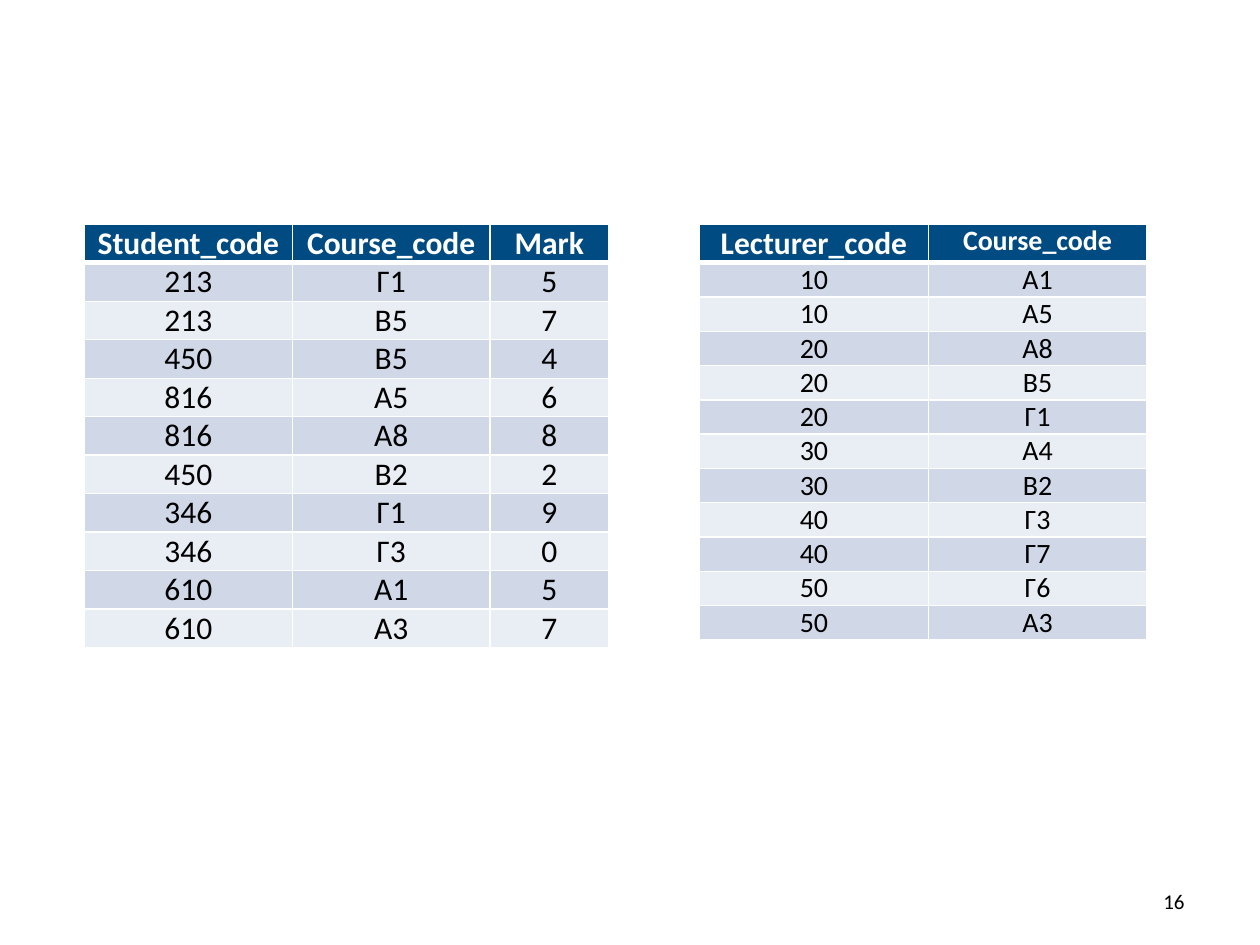
"""Build a slide with a table of student marks beside a table of lecturers' courses."""
from lxml.etree import SubElement
from pptx import Presentation
from pptx.dml.color import RGBColor
from pptx.enum.text import MSO_ANCHOR, PP_ALIGN
from pptx.oxml.ns import qn
from pptx.util import Inches, Pt


def write(tf, text, size=18, color="000000", bold=False, align=PP_ALIGN.CENTER):
    p = tf.paragraphs[0]
    p.alignment = align
    r = p.add_run()
    r.text = text
    r.font.name = "Calibri"
    r.font.size = Pt(size)
    r.font.bold = bold
    r.font.color.rgb = RGBColor.from_string(color)


def paint(cell, fill, bottom=1):
    cell.fill.solid()
    cell.fill.fore_color.rgb = RGBColor.from_string(fill)
    tcPr = cell._tc.get_or_add_tcPr()
    for i, (side, width) in enumerate(dict(lnL=1, lnR=1, lnT=1, lnB=bottom).items()):
        ln = SubElement(tcPr, qn(f"a:{side}"), w=str(Pt(width)))
        SubElement(SubElement(ln, qn("a:solidFill")), qn("a:srgbClr"), val="FFFFFF")
        tcPr.insert(i, ln)


prs = Presentation()
prs.slide_width, prs.slide_height = Inches(10), Inches(7.5)
s = prs.slides.add_slide(prs.slide_layouts[6])

marks = [
    ("Student_code", "Course_code", "Mark"),
    ("213", "Γ1", "5"), ("213", "Β5", "7"), ("450", "Β5", "4"),
    ("816", "Α5", "6"), ("816", "Α8", "8"), ("450", "Β2", "2"),
    ("346", "Γ1", "9"), ("346", "Γ3", "0"), ("610", "Α1", "5"),
    ("610", "Α3", "7"),
]
lecturers = [
    ("Lecturer_code", "Course_code"),
    ("10", "Α1"), ("10", "Α5"), ("20", "Α8"), ("20", "Β5"),
    ("20", "Γ1"), ("30", "Α4"), ("30", "Β2"), ("40", "Γ3"),
    ("40", "Γ7"), ("50", "Γ6"), ("50", "Α3"),
]
tables = [
    (marks, 0.67, (1.65, 1.57, 0.94), 0.3, 18),
    (lecturers, 5.55, (1.82, 1.73), 0.27, 16),
]

for rows, left, widths, row_height, size in tables:
    table = s.shapes.add_table(
        len(rows), len(widths), Inches(left), Inches(1.78),
        Inches(sum(widths)), Inches(row_height * len(rows))).table
    for column, width in zip(table.columns, widths):
        column.width = Inches(width)
    for y, row in enumerate(rows):
        for x, text in enumerate(row):
            cell = table.cell(y, x)
            cell.margin_left = cell.margin_right = Inches(0.07)
            cell.margin_top = cell.margin_bottom = 0
            if y == 0:
                paint(cell, "004B82", bottom=3)
                write(cell.text_frame, text, size=18 if x == 0 else size,
                      color="FFFFFF", bold=True)
            else:
                paint(cell, "D0D8E8" if y % 2 else "E9EDF4")
                write(cell.text_frame, text, size=size)

sp = s.shapes.add_textbox(Inches(7.17), Inches(6.95), Inches(2.33), Inches(0.4))
tf = sp.text_frame
tf.word_wrap = True
tf.vertical_anchor = MSO_ANCHOR.MIDDLE
write(tf, "16", size=12, align=PP_ALIGN.RIGHT)

prs.save("out.pptx")
